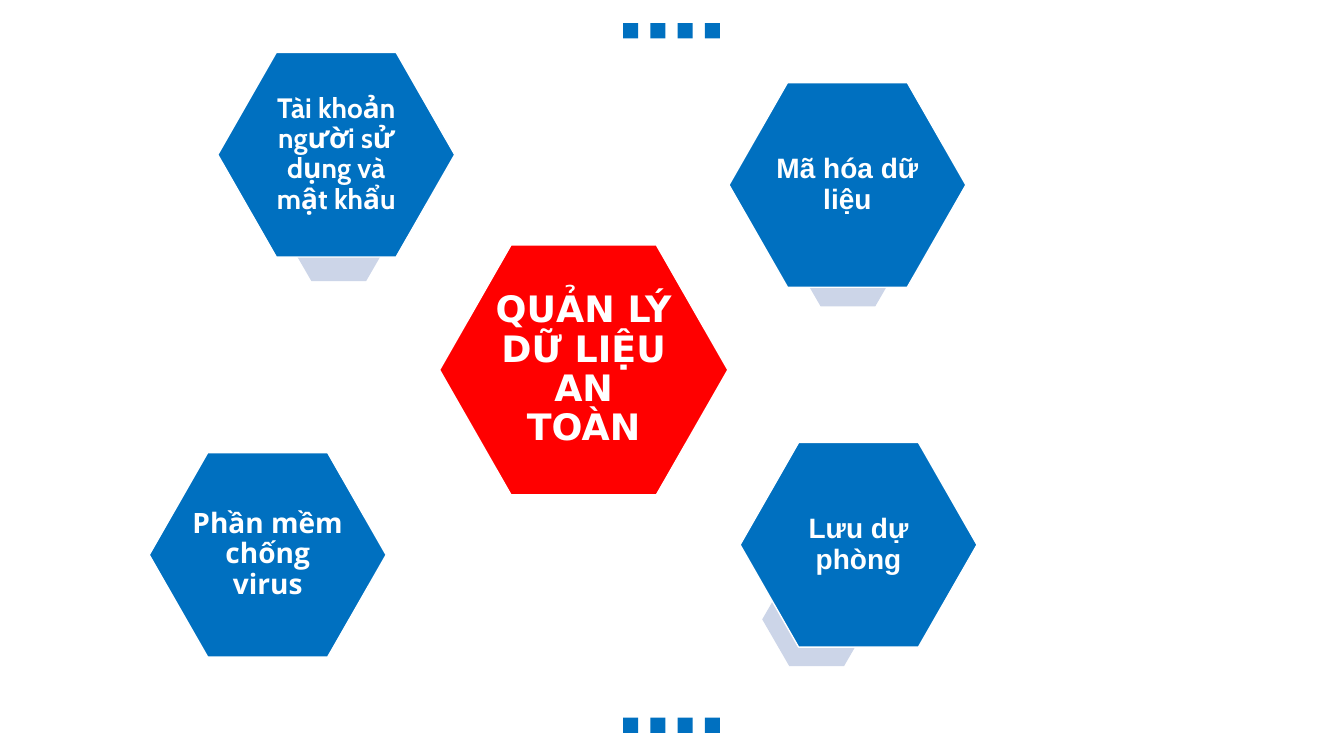
import pptx
import pptx.dml.color
import pptx.enum.shapes
import pptx.enum.text
import pptx.util
from pptx.util import Inches

BLUE = pptx.dml.color.RGBColor(0x00, 0x70, 0xC0)
RED = pptx.dml.color.RGBColor(0xFF, 0x00, 0x00)
PALE_BLUE = pptx.dml.color.RGBColor(0xCC, 0xD5, 0xE8)
WHITE = pptx.dml.color.RGBColor(0xFF, 0xFF, 0xFF)

TOPIC_SIZE = (2.35, 2.03)
ACCENT_SIZE = (1.08, 0.93)

# Text, font, position of the hexagon, position of the accent behind it
TOPICS = [
    ("Tài khoản người sử dụng và mật khẩu", "Cabin", (2.16, 0.52), (2.82, 1.86)),
    ("Mã hóa dữ liệu", "Arial", (7.23, 0.82), (7.87, 2.11)),
    ("Lưu dự phòng", "Arial", (7.34, 4.39), (7.56, 5.68)),
    ("Phần mềm chống virus", "Open Sans", (1.48, 4.49), None),
]


def add_filled_shape(slide, kind, position, size, color):
    shape = slide.shapes.add_shape(
        kind, *(Inches(length) for length in (*position, *size)))
    shape.shadow.inherit = False
    shape.fill.solid()
    shape.fill.fore_color.rgb = color
    shape.line.fill.background()
    return shape


def add_hexagon(slide, position, size, color, slant=0.286):
    """Add a hexagon whose slanted sides take the given share of its height."""
    hexagon = add_filled_shape(
        slide, pptx.enum.shapes.MSO_SHAPE.HEXAGON, position, size, color)
    hexagon.adjustments[0] = slant
    return hexagon


def add_labelled_hexagon(slide, position, size, color, text, font_name,
                         font_size, margin):
    hexagon = add_hexagon(slide, position, size, color)
    hexagon.line.color.rgb = WHITE
    hexagon.line.width = pptx.util.Pt(1)

    frame = hexagon.text_frame
    frame.word_wrap = True
    frame.vertical_anchor = pptx.enum.text.MSO_ANCHOR.MIDDLE
    frame.margin_left = frame.margin_right = Inches(margin)
    frame.margin_top = frame.margin_bottom = Inches(margin)

    paragraph = frame.paragraphs[0]
    paragraph.alignment = pptx.enum.text.PP_ALIGN.CENTER
    paragraph.line_spacing = 0.9
    run = paragraph.add_run()
    run.text = text
    run.font.name = font_name
    run.font.size = pptx.util.Pt(font_size)
    run.font.bold = True
    run.font.color.rgb = WHITE


def add_square_row(slide, top):
    for column in range(4):
        add_filled_shape(slide, pptx.enum.shapes.MSO_SHAPE.RECTANGLE,
                         (6.18 + 0.27 * column, top), (0.15, 0.15), BLUE)


def main():
    presentation = pptx.Presentation()
    presentation.slide_width = Inches(13.33)
    presentation.slide_height = Inches(7.5)
    slide = presentation.slides.add_slide(presentation.slide_layouts[6])

    for top in (0.23, 7.12):
        add_square_row(slide, top)

    add_labelled_hexagon(slide, (4.36, 2.43), (2.86, 2.48), RED,
                         "QUẢN LÝ DỮ LIỆU AN TOÀN", "DejaVu Sans", 26, 0.04)
    for text, font_name, position, accent_position in TOPICS:
        if accent_position:
            add_hexagon(slide, accent_position, ACCENT_SIZE, PALE_BLUE, 0.289)
        add_labelled_hexagon(slide, position, TOPIC_SIZE, BLUE,
                             text, font_name, 20, 0.03)

    presentation.save("out.pptx")


if __name__ == "__main__":
    main()
